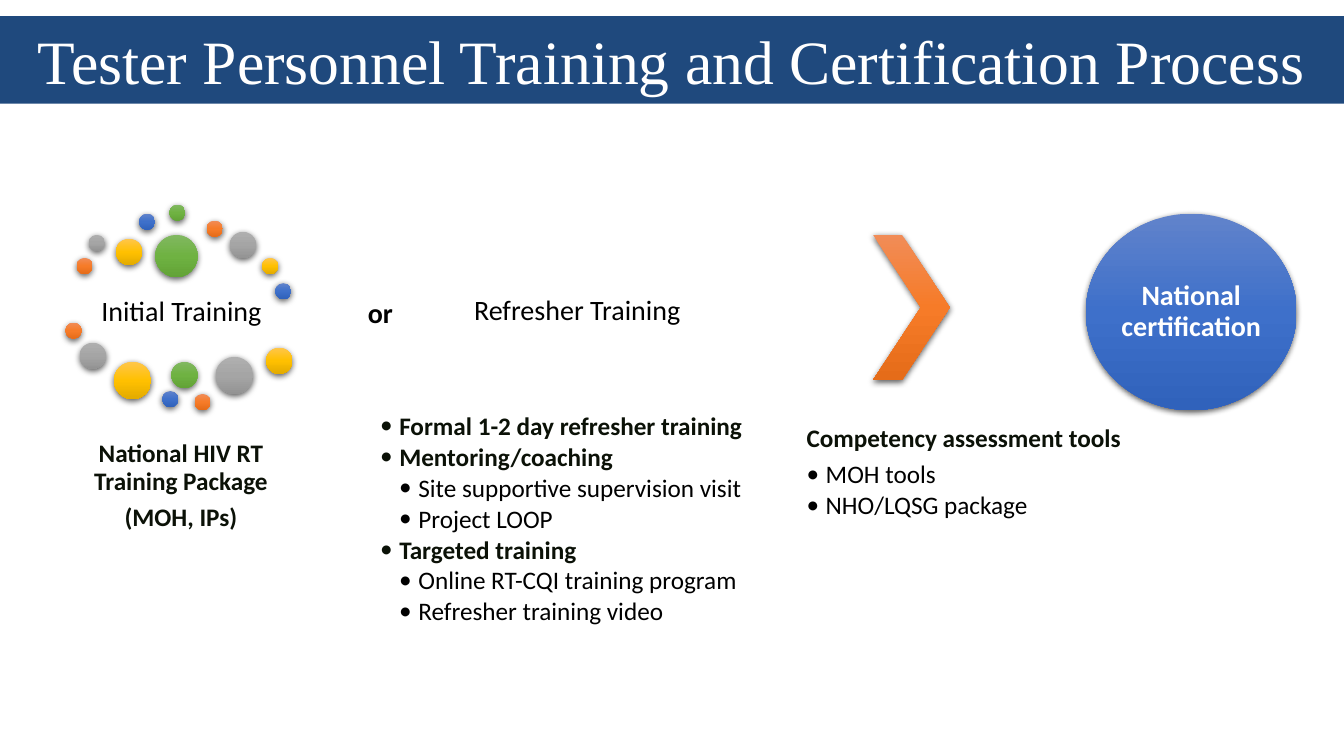
from copy import deepcopy

from lxml import etree
from pptx import Presentation
from pptx.dml.color import RGBColor
from pptx.enum.shapes import MSO_SHAPE
from pptx.enum.text import MSO_ANCHOR, PP_ALIGN
from pptx.oxml.ns import qn
from pptx.util import Inches, Pt

OVAL, RECT, CHEVRON = MSO_SHAPE.OVAL, MSO_SHAPE.RECTANGLE, MSO_SHAPE.CHEVRON
TOP, MIDDLE = MSO_ANCHOR.TOP, MSO_ANCHOR.MIDDLE
LEFT, CENTER = PP_ALIGN.LEFT, PP_ALIGN.CENTER

COLORS = {"navy": "1F497D", "white": "FFFFFF", "black": "000000", "dark": "0B1107"}
# Top, middle and bottom colour of each gradient
GRADS = {
    "orange": ("F18C57", "F67B28", "E56C19"),
    "gray": ("AFAFAF", "A5A5A5", "939393"),
    "gold": ("FFC64B", "FFC000", "E3AB00"),
    "blue": ("6183CB", "3E70CA", "3062BB"),
    "green": ("81B861", "6FB242", "62A336"),
}

# Text formats
BODY = {"size": Pt(18), "name": "Calibri", "bold": False, "color": "black"}
HEAD = {**BODY, "bold": True, "color": "dark"}
STAGE = {**BODY, "size": Pt(20)}
STRONG = {**STAGE, "bold": True}
TITLE = {**BODY, "size": Pt(44), "name": "Times New Roman", "color": "white"}

prs = Presentation()
prs.slide_width, prs.slide_height = Inches(13.33), Inches(7.5)
slide = prs.slides.add_slide(prs.slide_layouts[6])


def write(shape, lines, align=CENTER, anchor=MIDDLE, inset=0.03, ratio=0.9):
    """Fill a shape with lines of (text, format, bullet level)."""
    frame = shape.text_frame
    frame.word_wrap = True
    frame.vertical_anchor = anchor
    for side in ("left", "right", "top", "bottom"):
        setattr(frame, f"margin_{side}", Inches(inset))
    for i, (text, form, level) in enumerate(lines):
        para = frame.add_paragraph() if i else frame.paragraphs[0]
        para.alignment = align
        para.line_spacing = ratio
        para.space_after = Pt(2.7 if level else 6.3 if i < len(lines) - 1 else 0)
        run = para.add_run()
        run.text = text
        for key, value in form.items():
            if key == "color":
                run.font.color.rgb = RGBColor.from_string(COLORS[value])
            else:
                setattr(run.font, key, value)
        if level:
            para.level = level
            props = para._p.get_or_add_pPr()
            props.set("marL", str(Inches(0.19 * level)))
            props.set("indent", str(Inches(-0.19)))
            etree.SubElement(props, qn("a:buFont")).set("typeface", "Calibri")
            etree.SubElement(props, qn("a:buChar")).set("char", "•")


def glossy(kind, box, tone):
    """Add a shape with a vertical gradient and a soft shadow."""
    shape = slide.shapes.add_shape(kind, *map(Inches, box))
    shape.line.fill.background()
    shape.fill.gradient()
    shape.fill.gradient_angle = 270
    stops = shape._element.spPr.find(".//" + qn("a:gsLst"))
    stops.append(deepcopy(stops[0]))
    for i, stop in enumerate(shape.fill.gradient_stops):
        stop.position = i / 2
        stop.color.rgb = RGBColor.from_string(GRADS[tone][i])
    shape.shadow.inherit = False
    effects = shape._element.spPr.find(qn("a:effectLst"))
    shade = etree.SubElement(effects, qn("a:outerShdw"), blurRad=str(Pt(4.5)),
                             dist=str(Pt(1.5)), dir="5400000", algn="ctr", rotWithShape="0")
    color = etree.SubElement(shade, qn("a:srgbClr"), val=COLORS["black"])
    etree.SubElement(color, qn("a:alpha"), val="63000")
    return shape


# Title band
band = slide.shapes.add_shape(RECT, 0, Inches(0.16), prs.slide_width, Inches(0.87))
band.shadow.inherit = False
band.fill.solid()
band.fill.fore_color.rgb = RGBColor.from_string(COLORS["navy"])
band.line.fill.background()
write(band, [("Tester Personnel Training and Certification Process", TITLE, 0)],
      inset=0.1, ratio=1)

# Ring of dots: left, top, diameter, colour
DOTS = [
    (0.76, 2.56, 0.16, "orange"), (0.88, 2.33, 0.16, "gray"), (1.15, 2.37, 0.26, "gold"),
    (1.38, 2.12, 0.16, "blue"), (1.68, 2.03, 0.16, "green"), (2.05, 2.19, 0.16, "orange"),
    (2.28, 2.3, 0.26, "gray"), (2.6, 2.56, 0.16, "gold"), (2.73, 2.81, 0.16, "blue"),
    (1.54, 2.33, 0.42, "green"), (0.65, 3.2, 0.16, "orange"), (0.79, 3.4, 0.26, "gray"),
    (1.13, 3.59, 0.37, "gold"), (1.61, 3.88, 0.16, "blue"), (1.7, 3.59, 0.26, "green"),
    (1.93, 3.91, 0.16, "orange"), (2.14, 3.54, 0.37, "gray"), (2.64, 3.45, 0.26, "gold"),
]
for x, y, size, tone in DOTS:
    glossy(OVAL, (x, y, size, size), tone)

# Arrow and final stage
arrow = glossy(CHEVRON, (8.66, 2.33, 0.76, 1.44), "orange")
arrow.adjustments[0] = 0.623
goal = glossy(OVAL, (10.77, 2.12, 2.09, 1.95), "blue")
write(goal, [("National certification", {**STRONG, "color": "white"}, 0)], inset=0)

# Stage names and details: box, lines, layout
TEXTS = [
    ((0.77, 2.76, 2.06, 0.68), [("Initial Training", STAGE, 0)], {}),
    ((0.59, 4.19, 2.41, 1.27), [
        ("National HIV RT Training Package", HEAD, 0),
        ("(MOH, IPs)", HEAD, 0),
    ], {}),
    ((3.55, 2.88, 0.78, 0.44), [("or", STRONG, 0)],
     {"align": LEFT, "inset": 0.1, "ratio": 1}),
    ((4.17, 2.37, 3.11, 1.44), [("Refresher Training", STAGE, 0)], {}),
    ((3.74, 4.07, 4.2, 2.27), [
        ("Formal 1-2 day refresher training", HEAD, 1),
        ("Mentoring/coaching", HEAD, 1),
        ("Site supportive supervision visit", BODY, 2),
        ("Project LOOP", BODY, 2),
        ("Targeted training", HEAD, 1),
        ("Online RT-CQI training program", BODY, 2),
        ("Refresher training video", BODY, 2),
    ], {"align": LEFT, "anchor": TOP}),
    ((7.97, 4.19, 4.23, 1.27), [
        ("Competency assessment tools", HEAD, 0),
        ("MOH tools", BODY, 1),
        ("NHO/LQSG package", BODY, 1),
    ], {"align": LEFT, "anchor": TOP}),
]
for box, lines, layout in TEXTS:
    write(slide.shapes.add_textbox(*map(Inches, box)), lines, **layout)

prs.save("out.pptx")
